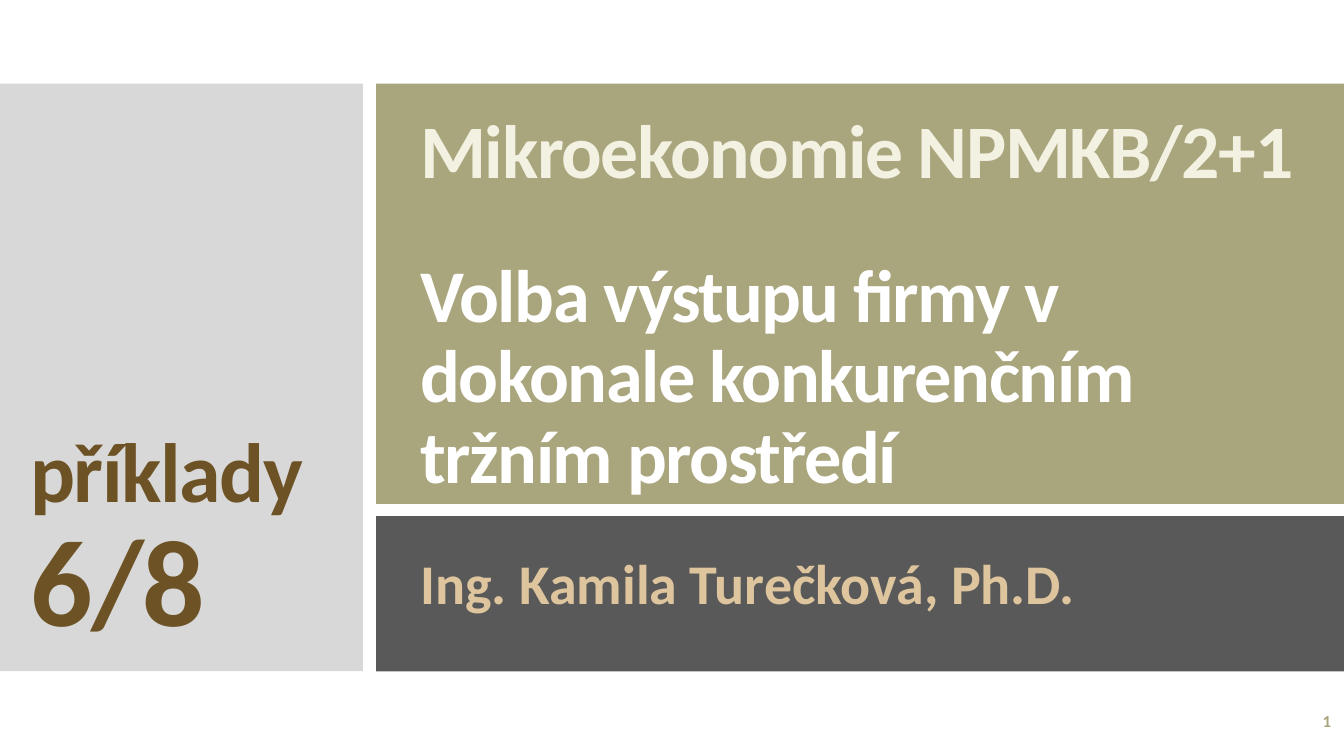
from pptx import Presentation
from pptx import util as u
from pptx.dml.color import RGBColor
from pptx.enum import shapes, text

OLIVE = RGBColor(0xA9, 0xA5, 0x7C)
LIGHT_GREY = RGBColor(0xD8, 0xD8, 0xD8)
DARK_GREY = RGBColor(0x59, 0x59, 0x59)
CREAM = RGBColor(0xF2, 0xF1, 0xE2)
WHITE = RGBColor(0xFF, 0xFF, 0xFF)
SAND = RGBColor(0xDE, 0xC5, 0x9E)
BROWN = RGBColor(0x6D, 0x52, 0x25)

PAGE_WIDTH = 13.33
BAND_TOP = 0.83
BAND_HEIGHT = 5.83


def add_panel(page, left, top, width, height, color):
    panel = page.shapes.add_shape(
        shapes.MSO_SHAPE.RECTANGLE, *map(u.Inches, (left, top, width, height)))
    panel.shadow.inherit = False
    panel.fill.solid()
    panel.fill.fore_color.rgb = color
    panel.line.fill.background()


def add_text_frame(page, left, top, width, height, anchor):
    box = page.shapes.add_textbox(*map(u.Inches, (left, top, width, height)))
    frame = box.text_frame
    frame.word_wrap = True
    frame.vertical_anchor = anchor
    return frame


def write(frame, words, *, size, color, tracking=0, leading=0.9, before=0,
          align=text.PP_ALIGN.LEFT):
    para = frame.paragraphs[0]
    if para.runs:
        para = frame.add_paragraph()
    para.alignment = align
    para.line_spacing = leading
    para.space_before = u.Pt(before)
    span = para.add_run()
    span.text = words
    span.font.name = "Calibri"
    span.font.size = u.Pt(size)
    span.font.bold = True
    span.font.color.rgb = color
    if tracking:
        span.font._element.set("spc", str(tracking * 100))


def add_lesson_panel(page, left, top, width, height):
    add_panel(page, left, top, width, height, LIGHT_GREY)
    frame = add_text_frame(page, left + 0.2, top + 0.12, width - 0.4,
                           height - 0.25, text.MSO_ANCHOR.BOTTOM)
    write(frame, "příklady", size=60, color=BROWN, tracking=-1)
    write(frame, "6/8", size=88, color=BROWN, tracking=-1)


def add_title_panel(page, left, top, width, height):
    add_panel(page, left, top, width, height, OLIVE)
    frame = add_text_frame(page, left + 0.34, top + 0.59, width - 0.54,
                           height - 0.59, text.MSO_ANCHOR.BOTTOM)
    write(frame, "Mikroekonomie NPMKB/2+1", size=54, color=CREAM, tracking=-1)
    write(frame, "Volba výstupu firmy v dokonale konkurenčním tržním prostředí",
          size=53.1, color=WHITE, tracking=-1, before=45)


def add_author_panel(page, left, top, width, height):
    add_panel(page, left, top, width, height, DARK_GREY)
    frame = add_text_frame(page, left + 0.34, top + 0.35, 7.86, 0.84,
                           text.MSO_ANCHOR.TOP)
    write(frame, "Ing. Kamila Turečková, Ph.D.", size=40, color=SAND)


def add_page_number(page, left, top, width, height):
    frame = add_text_frame(page, left, top, width, height,
                           text.MSO_ANCHOR.MIDDLE)
    write(frame, "1", size=12, color=OLIVE, leading=1,
          align=text.PP_ALIGN.RIGHT)


def main():
    deck = Presentation()
    deck.slide_width = u.Inches(PAGE_WIDTH)
    deck.slide_height = u.Inches(7.5)
    page = deck.slides.add_slide(deck.slide_layouts[6])
    right_left = 3.73
    right_width = PAGE_WIDTH - right_left
    add_lesson_panel(page, 0, BAND_TOP, 3.6, BAND_HEIGHT)
    add_title_panel(page, right_left, BAND_TOP, right_width, 4.17)
    add_author_panel(page, right_left, 5.12, right_width, 1.54)
    add_page_number(page, 11.63, 6.95, 1.67, 0.4)
    deck.save("out.pptx")


if __name__ == "__main__":
    main()
